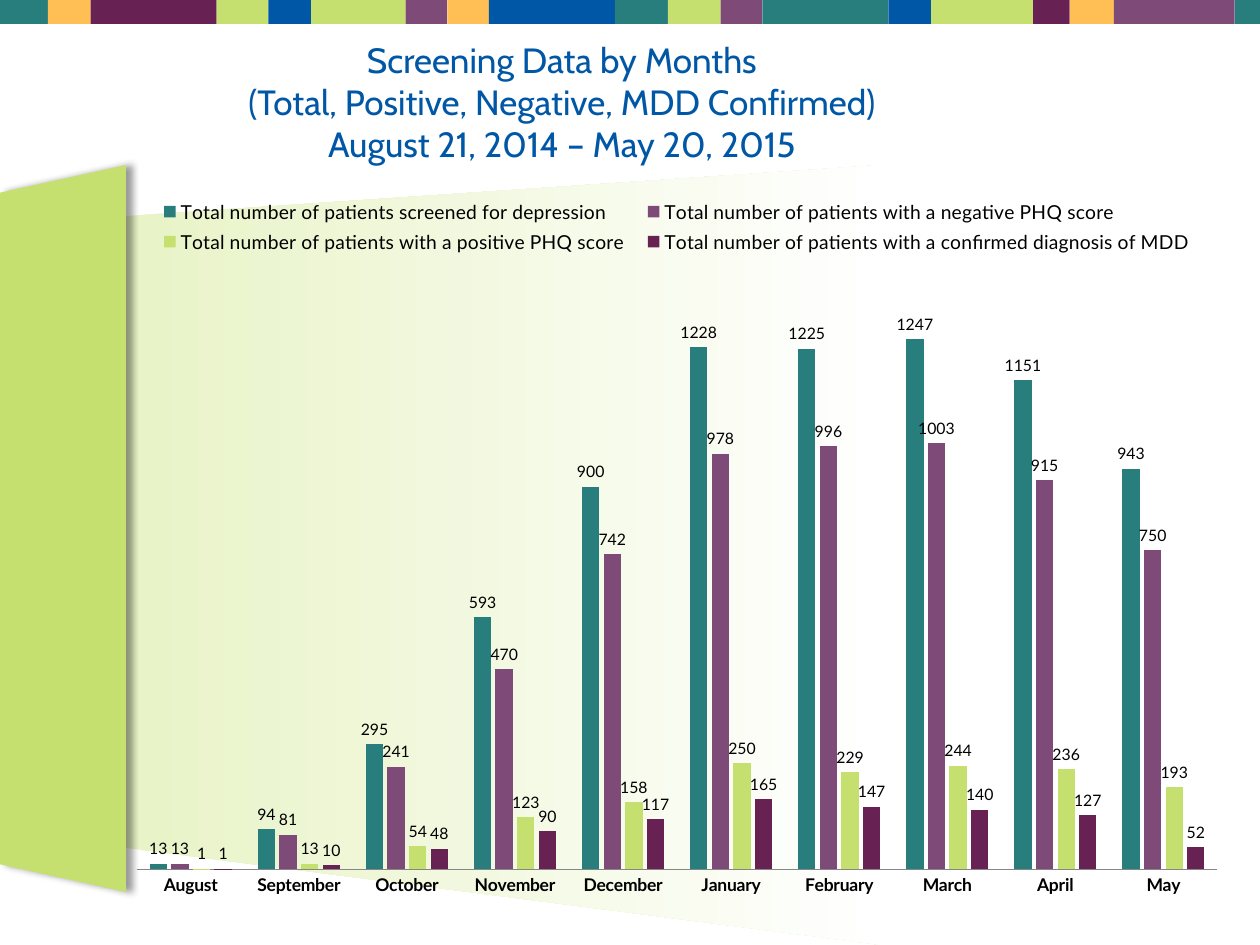
from lxml.etree import SubElement as Sub
from pptx import Presentation
from pptx.chart.data import CategoryChartData as Data
from pptx.dml.color import RGBColor as RGB
from pptx.enum.chart import (XL_CHART_TYPE as Kind, XL_LABEL_POSITION as Spot,
                             XL_LEGEND_POSITION as Side, XL_TICK_MARK as Tick)
from pptx.enum.shapes import MSO_SHAPE as Form
from pptx.enum.text import MSO_ANCHOR as Anchor, PP_ALIGN as Align
from pptx.oxml.ns import qn
from pptx.util import Inches as In, Pt

TEAL, PLUM, WINE = RGB(0x28, 0x7D, 0x7D), RGB(0x7E, 0x4A, 0x77), RGB(0x67, 0x21, 0x52)
LIME, PALE, GOLD = RGB(0xC6, 0xE0, 0x70), RGB(0xE8, 0xF3, 0xC6), RGB(0xFF, 0xBF, 0x55)
BLUE, GREY = RGB(0, 0x57, 0xA6), RGB(0x86, 0x86, 0x86)
BLACK, WHITE = RGB(0, 0, 0), RGB(255, 255, 255)

# Content
TITLE = ("Screening Data by Months\n(Total, Positive, Negative, MDD Confirmed)\n"
         "August 21, 2014 – May 20, 2015")
MONTHS = ["August", "September", "October", "November", "December",
          "January", "February", "March", "April", "May"]
SERIES = [
    ("Total number of patients screened for depression", TEAL,
     [13, 94, 295, 593, 900, 1228, 1225, 1247, 1151, 943]),
    ("Total number of patients with a negative PHQ score", PLUM,
     [13, 81, 241, 470, 742, 978, 996, 1003, 915, 750]),
    ("Total number of patients with a positive PHQ score", LIME,
     [1, 13, 54, 123, 158, 250, 229, 244, 236, 193]),
    ("Total number of patients with a confirmed diagnosis of MDD", WINE,
     [1, 10, 48, 90, 117, 165, 147, 140, 127, 52]),
]
# Left edge and colour of each strip block; each runs to the next edge
STRIP = [(-0.03, TEAL), (0.38, GOLD), (0.72, WINE), (1.72, LIME), (2.13, BLUE),
         (2.47, LIME), (3.22, PLUM), (3.55, GOLD), (3.88, BLUE), (4.88, TEAL),
         (5.3, LIME), (5.72, PLUM), (6.05, TEAL), (7.05, BLUE), (7.39, LIME),
         (8.2, WINE), (8.49, GOLD), (8.84, PLUM), (9.8, TEAL)]
BEAM = [(0.92, 1.72), (7, 1.31), (7, 7.5), (0.92, 6.72)]
PANEL = [(0, 1.53), (1, 1.31), (1, 7.08), (0, 6.86)]
# Shares of the chart's size
PLOT = {"x": 0, "y": 0.13, "w": 0.99, "h": 0.81}
KEYS = {"x": 0.01, "y": 0.02, "w": 0.97, "h": 0.09}

deck = Presentation()
deck.slide_width, deck.slide_height = In(10), In(7.5)
slide = deck.slides.add_slide(deck.slide_layouts[6])
shapes = slide.shapes


def style(obj, **vals):
    for key, val in vals.items():
        setattr(obj, key, val)


def plain(shape, color=None):
    shape.shadow.inherit = False
    shape.line.fill.background()
    if color is not None:
        shape.fill.solid()
        shape.fill.fore_color.rgb = color
    return shape


def outline(pts):
    first, *rest = [(In(x), In(y)) for x, y in pts]
    pen = shapes.build_freeform(*first)
    pen.add_line_segments(rest, close=True)
    return pen.convert_to_shape()


def place(part, index, box, inner=False):
    for old in part.findall(qn("c:layout")):
        part.remove(old)
    layout = Sub(part, qn("c:layout"))
    part.insert(index, layout)
    manual = Sub(layout, qn("c:manualLayout"))
    if inner:
        Sub(manual, qn("c:layoutTarget"), val="inner")
    for key in "xy":
        Sub(manual, qn(f"c:{key}Mode"), val="edge")
    for key, val in box.items():
        Sub(manual, qn("c:" + key), val=str(val))


# Fading beam
beam = plain(outline(BEAM))
beam.fill.gradient()
beam.fill.gradient_angle = 0
for stop, color, at in zip(beam.fill.gradient_stops, (PALE, WHITE), (0, 1)):
    stop.color.rgb = color
    stop.position = at

# Side panel with a soft shadow to the right
panel = plain(outline(PANEL), LIME)
glow = Sub(panel.element.spPr.find(qn("a:effectLst")), qn("a:outerShdw"),
           blurRad=str(Pt(4)), dist=str(Pt(3)), dir="0", algn="l", rotWithShape="0")
Sub(Sub(glow, qn("a:srgbClr"), val="000000"), qn("a:alpha"), val="40000")

# Colour strip
ends = [left for left, _ in STRIP[1:]] + [10]
for (left, color), end in zip(STRIP, ends):
    plain(shapes.add_shape(Form.RECTANGLE, In(left), In(-0.03),
                           In(end - left), In(0.22)), color)

# Title
frame = shapes.add_textbox(In(0.5), In(0.3), In(7.92), In(1.01)).text_frame
style(frame, word_wrap=True, vertical_anchor=Anchor.MIDDLE)
para = frame.paragraphs[0]
style(para, text=TITLE, alignment=Align.CENTER)
for run in para.runs:
    style(run.font, name="Cabin", size=Pt(20))
    run.font.color.rgb = BLUE

# Chart
data = Data()
data.categories = MONTHS
for name, _, vals in SERIES:
    data.add_series(name, vals)
chart = shapes.add_chart(Kind.COLUMN_CLUSTERED, In(1.08), In(1.42),
                         In(8.67), In(5.83), data).chart
style(chart, has_title=False, has_legend=True)
style(chart.font, name="Lato", size=Pt(10))
chart.font.color.rgb = BLACK
style(chart.legend, position=Side.TOP, include_in_layout=False)
chart.legend.font.size = Pt(11)

plot = chart.plots[0]
style(plot, gap_width=150, overlap=-25, vary_by_categories=False)
for series, (_, color, _) in zip(plot.series, SERIES):
    series.format.fill.solid()
    series.format.fill.fore_color.rgb = color
    labels = series.data_labels
    style(labels, show_value=True, position=Spot.OUTSIDE_END)
    labels.font.size = Pt(9)

# Axes
style(chart.value_axis, visible=False, has_major_gridlines=False,
      minimum_scale=0, maximum_scale=1400)
months = chart.category_axis
style(months, major_tick_mark=Tick.NONE, minor_tick_mark=Tick.NONE)
style(months.tick_labels.font, bold=True, size=Pt(10))
months.format.line.color.rgb = GREY

# Fixed places for the plot and the two-column legend
root = chart.element
place(root.find(".//" + qn("c:plotArea")), 0, PLOT, inner=True)
place(root.find(".//" + qn("c:legend")), 1, KEYS)

deck.save("out.pptx")
